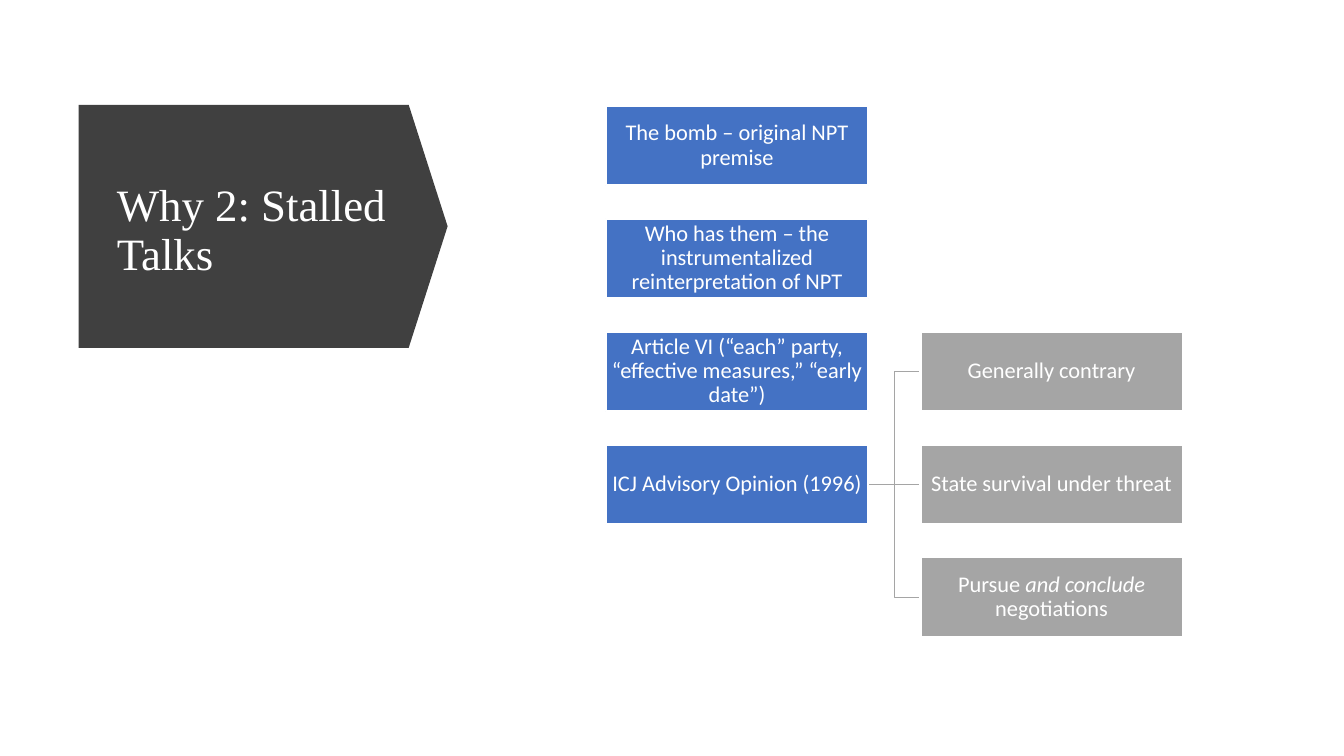
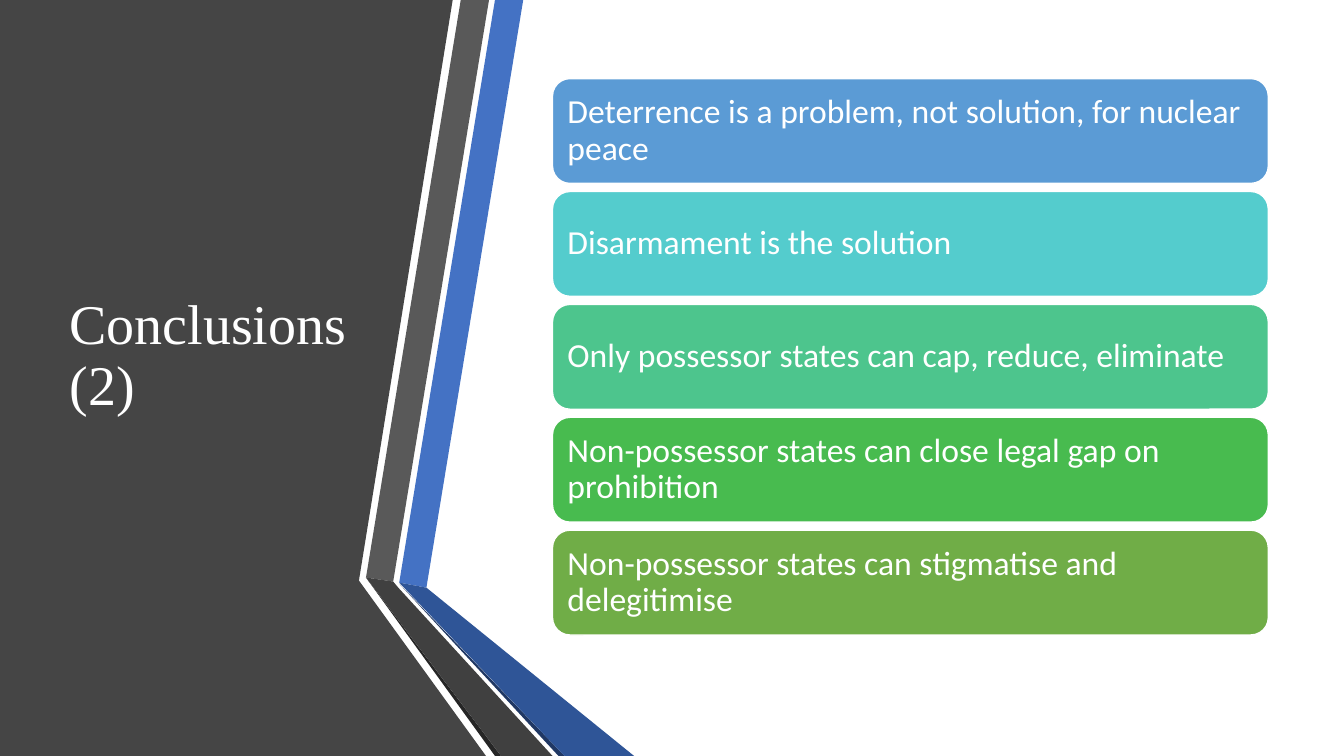
from lxml import etree
from pptx import Presentation
from pptx import util as u
from pptx.dml.color import RGBColor
from pptx.enum import shapes, text
from pptx.oxml.ns import qn

WHITE = RGBColor(0xFF, 0xFF, 0xFF)
BLUE = RGBColor(0x44, 0x72, 0xC4)
BLUE_DARK = RGBColor(0x2F, 0x55, 0x97)
NAVY = RGBColor(0x20, 0x38, 0x64)
SILVER = RGBColor(0xA5, 0xA5, 0xA5)
GREY = RGBColor(0x59, 0x59, 0x59)
CHARCOAL = RGBColor(0x40, 0x40, 0x40)
PANEL = RGBColor(0x45, 0x45, 0x45)
BLACKISH = RGBColor(0x26, 0x26, 0x26)
SKY = RGBColor(0x5B, 0x9B, 0xD5)
TURQUOISE = RGBColor(0x54, 0xCC, 0xCD)
MINT = RGBColor(0x4D, 0xC5, 0x8D)
GREEN = RGBColor(0x48, 0xBB, 0x4F)
OLIVE = RGBColor(0x70, 0xAD, 0x47)

TITLE_FONT, BODY_FONT = "Times New Roman", "Calibri"
TITLE_ONLY = 5
ROW_PITCH = 1.12  # vertical step of the boxes on both slides


def write(shape, runs, size, font=BODY_FONT, align=text.PP_ALIGN.LEFT, inset=None):
    """Write one paragraph of (words, italic) runs, centred vertically."""
    frame = shape.text_frame
    frame.word_wrap = True
    frame.auto_size = text.MSO_AUTO_SIZE.NONE
    frame.vertical_anchor = text.MSO_ANCHOR.MIDDLE
    if inset is not None:
        frame.margin_left = frame.margin_right = u.Inches(inset)
        frame.margin_top = frame.margin_bottom = u.Inches(inset)
    paragraph = frame.paragraphs[0]
    paragraph.alignment = align
    paragraph.line_spacing = 0.9
    for words, italic in runs:
        run = paragraph.add_run()
        run.text = words
        run.font.name, run.font.size = font, u.Pt(size)
        run.font.italic = italic
        run.font.color.rgb = WHITE


def paint(shape, fill, outline=None):
    shape.shadow.inherit = False
    shape.fill.solid()
    shape.fill.fore_color.rgb = fill
    if outline:
        shape.line.color.rgb = WHITE
        shape.line.width = u.Pt(outline)
    else:
        shape.line.fill.background()


def add_block(slide, kind, box, fill, outline=None):
    block = slide.shapes.add_shape(kind, *map(u.Inches, box))
    paint(block, fill, outline)
    return block


def add_outline(slide, points, fill):
    """Closed polygon through points in inches."""
    start, *rest = [(round(x * 100), round(y * 100)) for x, y in points]
    builder = slide.shapes.build_freeform(*start, scale=u.Inches(0.01))
    builder.add_line_segments(rest, close=True)
    paint(builder.convert_to_shape(), fill)


def place_title(slide, words, box, size):
    title = slide.shapes.title
    title.left, title.top, title.width, title.height = map(u.Inches, box)
    write(title, [(words, False)], size, font=TITLE_FONT)
    title.element.getparent().append(title.element)  # above the backdrop


def join(slide, parent, child):
    """Line from the right side of parent to the left side of child, behind both."""
    level = parent.top == child.top
    kind = shapes.MSO_CONNECTOR.STRAIGHT if level else shapes.MSO_CONNECTOR.ELBOW
    branch = slide.shapes.add_connector(kind, 0, 0, 0, 0)
    branch.begin_connect(parent, 3)
    branch.end_connect(child, 1)
    branch.line.color.rgb = SILVER
    branch.line.width = u.Pt(1)
    etree.SubElement(branch.element.spPr, qn("a:effectLst"))
    branch.element.getparent().insert(2, branch.element)


def tree_diagram(slide, left, top):
    """Column of topics; the last one branches into three findings."""
    width, height, column_pitch = 2.6, 0.79, 3.12
    topics = [
        "The bomb – original NPT premise",
        "Who has them – the instrumentalized reinterpretation of NPT",
        "Article VI (“each” party, “effective measures,” “early date”)",
        "ICJ Advisory Opinion (1996)",
    ]
    findings = [
        [("Generally contrary", False)],
        [("State survival under threat", False)],
        [("Pursue ", False), ("and conclude ", True), ("negotiations", False)],
    ]

    def add_node(column, row, runs, fill):
        box = (left + column * column_pitch, top + row * ROW_PITCH, width, height)
        node = add_block(slide, shapes.MSO_SHAPE.RECTANGLE, box, fill, outline=1.5)
        write(node, runs, 16, align=text.PP_ALIGN.CENTER, inset=0.01)
        return node

    topic_nodes = [add_node(0, row, [(topic, False)], BLUE)
                   for row, topic in enumerate(topics)]
    for row, finding in enumerate(findings, start=2):
        join(slide, topic_nodes[-1], add_node(1, row, finding, SILVER))


def folded_ribbons(slide):
    """Dark title panel with two ribbons folding along its right edge."""
    ribbons = [
        (PANEL, [(0, 0), (4.49, 0), (3.56, 5.76), (4.82, 7.5), (0, 7.5)]),
        (BLUE, [(3.96, 5.78), (4.23, 5.83), (5.19, 0), (4.91, 0)]),
        (GREY, [(3.63, 5.73), (3.9, 5.77), (4.85, 0), (4.57, 0)]),
        (BLACKISH, [(3.63, 5.73), (4.91, 7.5), (4.97, 7.5)]),
        (NAVY, [(3.96, 5.79), (5.54, 7.5), (5.6, 7.5)]),
        (BLUE_DARK, [(3.96, 5.78), (5.6, 7.5), (6.29, 7.5), (4.23, 5.83)]),
        (CHARCOAL, [(3.63, 5.73), (4.97, 7.5), (5.48, 7.5), (3.95, 5.83), (3.9, 5.77)]),
    ]
    for fill, points in ribbons:
        add_outline(slide, points, fill)


def conclusion_bars(slide, left, top, width, height):
    conclusions = [
        ("Deterrence is a problem, not solution, for nuclear peace", SKY),
        ("Disarmament is the solution", TURQUOISE),
        ("Only possessor states can cap, reduce, eliminate", MINT),
        ("Non-possessor states can close legal gap on prohibition", GREEN),
        ("Non-possessor states can stigmatise and delegitimise", OLIVE),
    ]
    for row, (words, fill) in enumerate(conclusions):
        box = (left, top + row * ROW_PITCH, width, height)
        bar = add_block(slide, shapes.MSO_SHAPE.ROUNDED_RECTANGLE, box, fill, outline=1)
        write(bar, [(words, False)], 24, inset=0.1)


def stalled_talks_slide(deck):
    slide = deck.slides.add_slide(deck.slide_layouts[TITLE_ONLY])
    # Title on an arrow-shaped panel
    panel = add_block(slide, shapes.MSO_SHAPE.PENTAGON, (0.78, 1.04, 3.66, 2.41), CHARCOAL)
    panel.adjustments[0] = 0.16
    place_title(slide, "Why 2: Stalled Talks", (1.06, 1.32, 2.92, 1.95), 32)
    tree_diagram(slide, 6.01, 1.05)


def conclusions_slide(deck):
    slide = deck.slides.add_slide(deck.slide_layouts[TITLE_ONLY])
    folded_ribbons(slide)
    place_title(slide, "Conclusions (2)", (0.59, 0.75, 3.04, 5.58), 40)
    conclusion_bars(slide, 5.48, 0.78, 7.1, 1.04)


def main():
    deck = Presentation()
    deck.slide_width, deck.slide_height = u.Inches(13.33), u.Inches(7.5)
    stalled_talks_slide(deck)
    conclusions_slide(deck)
    deck.save("out.pptx")


if __name__ == "__main__":
    main()
